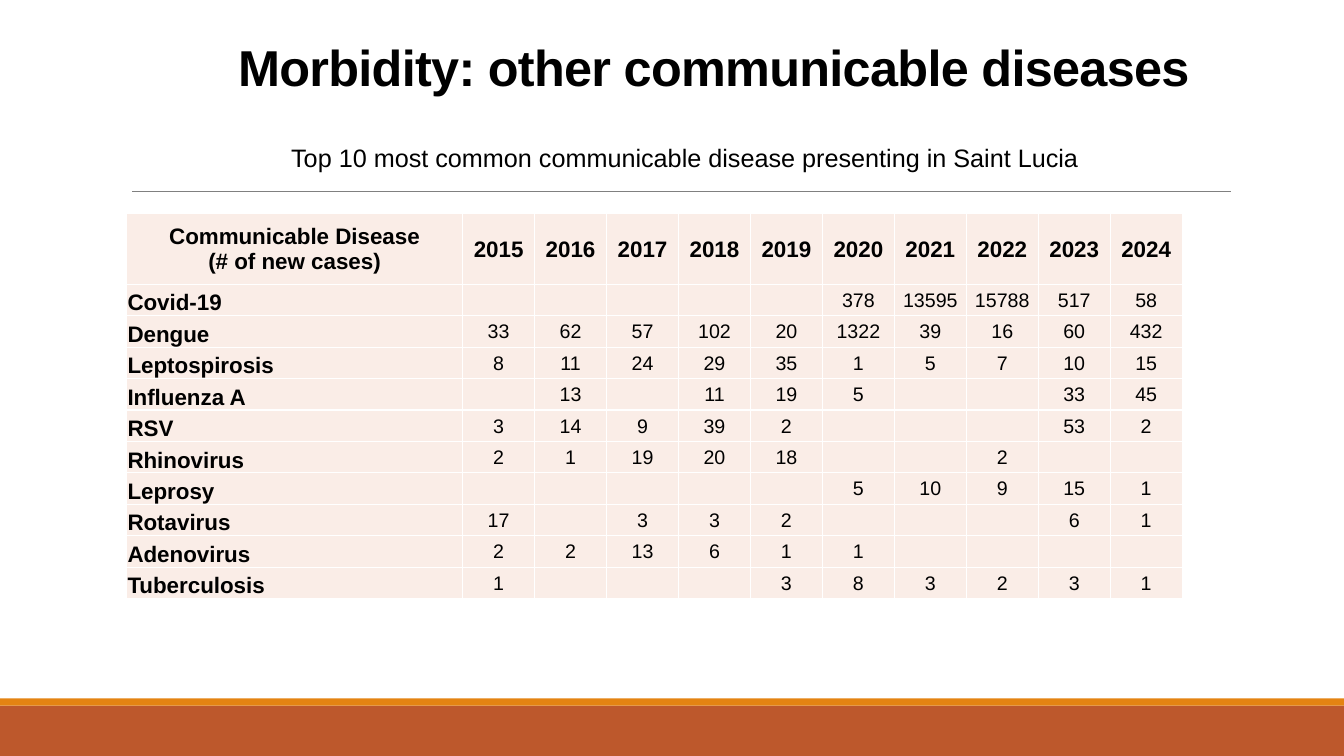
from lxml import etree
from pptx import Presentation, util as u
from pptx.dml.color import RGBColor
from pptx.enum import shapes, text
from pptx.oxml import ns

COLS, ROWS = 133.33, 75
UNIT = u.Inches(0.1)
FONT = "Arial"
HUES = {
    "ink": "000000",
    "rust": "BD582C",
    "gold": "E48312",
    "rule": "808080",
    "cell": "FAEDE7",
    "edge": "FFFFFF",
}
YEARS = range(2015, 2025)
CASES = {
    "Covid-19": ["", "", "", "", "", 378, 13595, 15788, 517, 58],
    "Dengue": [33, 62, 57, 102, 20, 1322, 39, 16, 60, 432],
    "Leptospirosis": [8, 11, 24, 29, 35, 1, 5, 7, 10, 15],
    "Influenza A": ["", 13, "", 11, 19, 5, "", "", 33, 45],
    "RSV": [3, 14, 9, 39, 2, "", "", "", 53, 2],
    "Rhinovirus": [2, 1, 19, 20, 18, "", "", 2, "", ""],
    "Leprosy": ["", "", "", "", "", 5, 10, 9, 15, 1],
    "Rotavirus": [17, "", 3, 3, 2, "", "", "", 6, 1],
    "Adenovirus": [2, 2, 13, 6, 1, 1, "", "", "", ""],
    "Tuberculosis": [1, "", "", "", 3, 8, 3, 2, 3, 1],
}
MID, END = text.MSO_ANCHOR.MIDDLE, text.MSO_ANCHOR.BOTTOM
LEFT, MEAN = text.PP_ALIGN.LEFT, text.PP_ALIGN.CENTER


def grid(*sizes):
    return [round(size * UNIT) for size in sizes]


def hue(name):
    return RGBColor.from_string(HUES[name])


def add_run(para, words, size, bold=False):
    run = para.add_run()
    run.text = words
    run.font.name = FONT
    run.font.size = u.Pt(size)
    run.font.bold = bold
    run.font.color.rgb = hue("ink")
    return run


def add_bar(slide, top, tall, name):
    bar = slide.shapes.add_shape(
        shapes.MSO_SHAPE.RECTANGLE, *grid(0, top, COLS, tall))
    bar.shadow.inherit = False
    bar.fill.solid()
    bar.fill.fore_color.rgb = hue(name)
    bar.line.fill.background()


def add_rule(slide, left, right, top):
    rule = slide.shapes.add_connector(
        shapes.MSO_CONNECTOR.STRAIGHT, *grid(left, top, right, top))
    rule.line.color.rgb = hue("rule")
    rule.line.width = u.Pt(0.5)
    etree.SubElement(rule._element.spPr, ns.qn("a:effectLst"))


def add_text(slide, box, words, size, bold=False, wrap=True):
    frame = slide.shapes.add_textbox(*grid(*box)).text_frame
    frame.word_wrap = wrap
    return frame, add_run(frame.paragraphs[0], words, size, bold)


def add_title(slide):
    frame, run = add_text(slide, (15.8, 2.9, 110, 7.2),
                          "Morbidity: other communicable diseases", 36, True)
    frame.vertical_anchor = END
    frame.paragraphs[0].alignment = MEAN
    frame.paragraphs[0].line_spacing = 0.85
    run.font._element.set("spc", "-50")


def add_edges(cell):
    props = cell._tc.get_or_add_tcPr()
    for side in "LRTB":
        line = etree.SubElement(props, ns.qn(f"a:ln{side}"), w=str(u.Pt(1)))
        fill = etree.SubElement(line, ns.qn("a:solidFill"))
        etree.SubElement(fill, ns.qn("a:srgbClr"), val=HUES["edge"])


def fill_cell(cell, words, size, bold, align, anchor):
    add_edges(cell)
    cell.fill.solid()
    cell.fill.fore_color.rgb = hue("cell")
    cell.margin_left = cell.margin_right = cell.margin_top = u.Inches(0.01)
    cell.margin_bottom = 0
    cell.vertical_anchor = anchor
    frame = cell.text_frame
    for i, line in enumerate(str(words).split("\n")):
        para = frame.add_paragraph() if i else frame.paragraphs[0]
        para.alignment = align
        if line:
            add_run(para, line, size, bold)
        else:
            etree.SubElement(para._p, ns.qn("a:endParaRPr"), sz=str(size * 100))


def add_cases(slide):
    head = ["Communicable Disease\n(# of new cases)", *YEARS]
    lines = [head] + [[name, *counts] for name, counts in CASES.items()]
    wide = [33.35] + [7.14] * len(YEARS)
    tall = [7] + [3.12] * len(CASES)
    table = slide.shapes.add_table(
        len(tall), len(wide), *grid(12.55, 21.2, sum(wide), sum(tall))).table
    for col, size in zip(table.columns, grid(*wide)):
        col.width = size
    for row, size in zip(table.rows, grid(*tall)):
        row.height = size
    for r, line in enumerate(lines):
        for c, words in enumerate(line):
            label = r > 0 and c == 0
            bold = r == 0 or c == 0
            fill_cell(table.cell(r, c), words, 16 if bold else 14, bold,
                      LEFT if label else MEAN, END if label else MID)


def main():
    deck = Presentation()
    deck.slide_width, deck.slide_height = grid(COLS, ROWS)
    slide = deck.slides.add_slide(deck.slide_layouts[6])
    add_bar(slide, 70, 5, "rust")
    add_bar(slide, 69.3, 0.7, "gold")
    add_rule(slide, 13.1, 122.1, 19)
    add_title(slide)
    add_cases(slide)
    add_text(slide, (27.9, 13.6, 80.8, 4),
             "Top 10 most common communicable disease presenting in Saint Lucia",
             18, wrap=False)
    deck.save("out.pptx")


if __name__ == "__main__":
    main()
